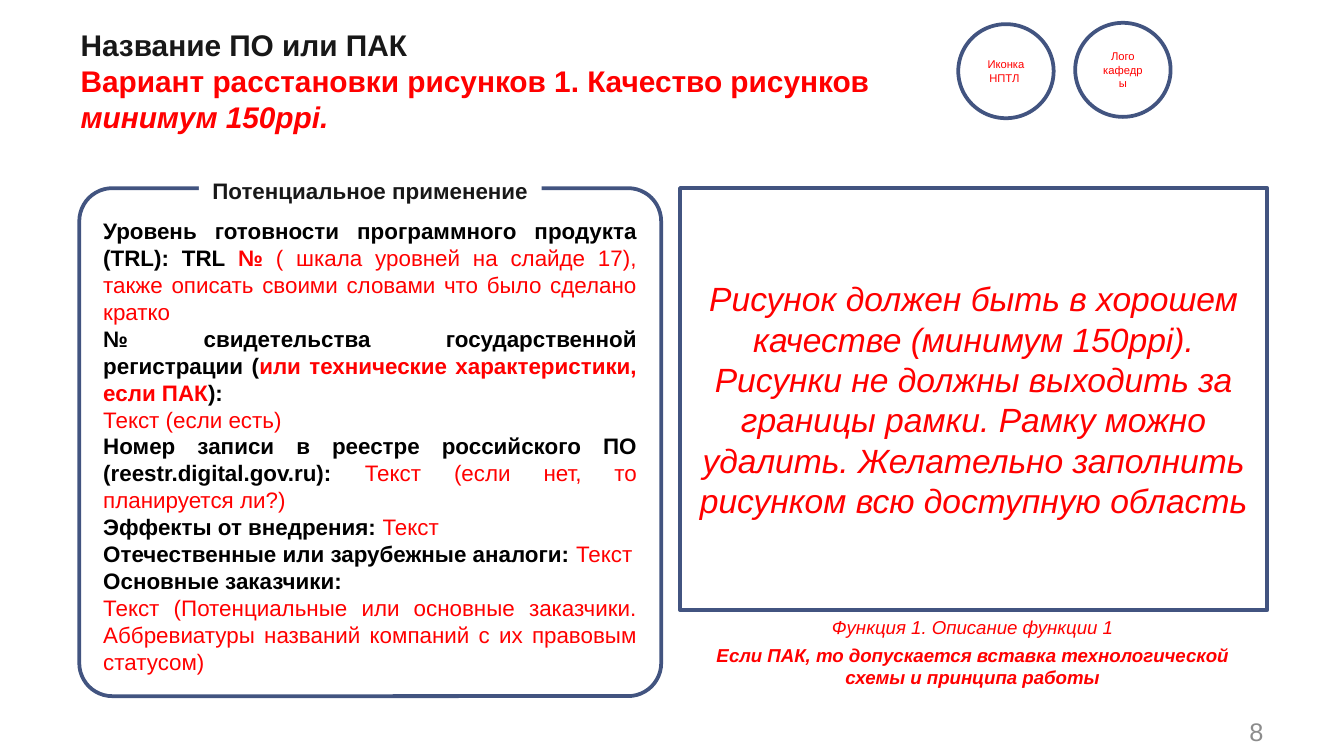
from pptx import Presentation
from pptx import util as u
from pptx.dml.color import RGBColor
from pptx.enum import shapes, text

COLOURS = {"ink": "181818", "black": "000000", "red": "FF0000",
           "frame": "425480", "white": "FFFFFF", "grey": "8C8C8C"}

# Styles of runs
HEADING = {"color": "ink", "bold": True}
LABEL = {"color": "black", "bold": True}
HINT = {"color": "red"}
STRONG = {"color": "red", "bold": True}
SLANTED = {"color": "red", "italic": True}
STRONG_SLANTED = {"color": "red", "bold": True, "italic": True}
NUMBER = {"color": "grey"}

# Content: each text is a list of paragraphs, each paragraph a list of runs
TITLE = [[
    ("Название ПО или ПАК", HEADING), "break",
    ("Вариант расстановки рисунков 1. Качество рисунков ", STRONG),
    ("минимум 150ppi.", STRONG_SLANTED)]]
APPLICATION_HEADING = [[("Потенциальное применение", HEADING)]]
APPLICATION = [
    [("Уровень готовности программного продукта (TRL): TRL ", LABEL),
     ("№ ", STRONG),
     ("( шкала уровней на слайде 17), также описать своими словами "
      "что было сделано кратко", HINT)],
    [("№ свидетельства государственной регистрации (", LABEL),
     ("или технические характеристики, если ПАК", STRONG),
     ("):", LABEL)],
    [("Текст (если есть)", HINT)],
    [("Номер записи в реестре российского ПО (reestr.digital.gov.ru): ", LABEL),
     ("Текст (если нет, то планируется ли?)", HINT)],
    [("Эффекты от внедрения: ", LABEL), ("Текст", HINT)],
    [("Отечественные или зарубежные аналоги: ", LABEL), ("Текст", HINT)],
    [("Основные заказчики:", LABEL)],
    [("Текст (Потенциальные или основные заказчики. Аббревиатуры названий "
      "компаний с их правовым статусом)", HINT)],
]
FIGURE = [[(
    "Рисунок должен быть в хорошем качестве (минимум 150ppi). Рисунки не "
    "должны выходить за границы рамки. Рамку можно удалить. Желательно "
    "заполнить рисунком всю доступную область", SLANTED)]]
CAPTION = [
    [("Функция 1. Описание функции 1", SLANTED)],
    [("Если ПАК, то допускается вставка технологической схемы и принципа "
      "работы", STRONG_SLANTED)],
]
BADGES = [
    (8.00, 0.17, [[("Лого", HINT)], [("кафедры", HINT)]]),
    (7.13, 0.18, [[("Иконка НПТЛ ", HINT)]]),
]
SLIDE_NUMBER = [[("8", NUMBER)]]

# Panel grid, in inches
PANEL_TOP = 1.4
LEFT_X, LEFT_WIDTH, LEFT_HEIGHT = 0.59, 4.33, 3.78
RIGHT_X, RIGHT_WIDTH, RIGHT_HEIGHT = 5.06, 4.37, 3.14
TEXT_MARGIN = 0.08
HEADING_TOP, HEADING_WIDTH, HEADING_HEIGHT = 1.27, 2.55, 0.3
BADGE_SIZE = (0.71, 0.7)


def colour(name):
    return RGBColor.from_string(COLOURS[name])


def write(shape, paragraphs, size, align="LEFT", anchor="TOP", wrap=True, gap=0):
    """Fill a shape with formatted paragraphs; gap is the space between them."""
    frame = shape.text_frame
    frame.word_wrap = wrap
    frame.auto_size = text.MSO_AUTO_SIZE.NONE
    frame.vertical_anchor = text.MSO_ANCHOR[anchor]
    for index, runs in enumerate(paragraphs):
        paragraph = frame.add_paragraph() if index else frame.paragraphs[0]
        paragraph.alignment = text.PP_ALIGN[align]
        if index:
            paragraph.space_before = u.Pt(gap)
        for part in runs:
            if part == "break":
                paragraph.add_line_break()
                continue
            words, style = part
            run = paragraph.add_run()
            run.text = words
            run.font.color.rgb = colour(style["color"])
            values = {"name": "Arial", "size": u.Pt(size),
                      "bold": style.get("bold", False),
                      "italic": style.get("italic", False)}
            for key, value in values.items():
                setattr(run.font, key, value)


def add_box(slide, kind, place, outlined=True):
    shape = slide.shapes.add_shape(shapes.MSO_SHAPE[kind], *map(u.Inches, place))
    shape.shadow.inherit = False
    shape.fill.solid()
    shape.fill.fore_color.rgb = colour("white")
    if outlined:
        shape.line.color.rgb = colour("frame")
        shape.line.width = u.Pt(2)
    else:
        shape.line.fill.background()
    return shape


def add_text(slide, place, paragraphs, size, **options):
    write(slide.shapes.add_textbox(*map(u.Inches, place)), paragraphs, size, **options)


def main():
    presentation = Presentation()
    presentation.slide_width = u.Inches(10)
    presentation.slide_height = presentation.slide_width * 9 // 16
    slide = presentation.slides.add_slide(presentation.slide_layouts[5])

    # Title
    title = slide.shapes.title
    title.left, title.top, title.width, title.height = map(
        u.Inches, (0.5, 0.15, 6.47, 0.7))
    write(title, TITLE, 16)

    # Left panel: frame, heading set into its top edge, description
    panel = add_box(slide, "ROUNDED_RECTANGLE",
                    (LEFT_X, PANEL_TOP, LEFT_WIDTH, LEFT_HEIGHT))
    panel.adjustments[0] = 0.065
    heading_x = LEFT_X + (LEFT_WIDTH - HEADING_WIDTH) / 2
    heading = add_box(slide, "RECTANGLE",
                      (heading_x, HEADING_TOP, HEADING_WIDTH, HEADING_HEIGHT),
                      outlined=False)
    write(heading, APPLICATION_HEADING, 12, align="CENTER", wrap=False)
    add_text(slide, (LEFT_X + TEXT_MARGIN, HEADING_TOP + HEADING_HEIGHT,
                     LEFT_WIDTH - 2 * TEXT_MARGIN, 3.33),
             APPLICATION, 12, align="JUSTIFY")

    # Right panel: caption, and the figure frame above it
    add_text(slide, (RIGHT_X, 4.53, 4.35, 0.82),
             CAPTION, 10, align="CENTER", gap=3)
    figure = add_box(slide, "RECTANGLE",
                     (RIGHT_X, PANEL_TOP, RIGHT_WIDTH, RIGHT_HEIGHT))
    write(figure, FIGURE, 18, align="CENTER", anchor="MIDDLE")

    # Round badges
    for x, y, label in BADGES:
        badge = add_box(slide, "OVAL", (x, y, *BADGE_SIZE))
        write(badge, label, 6, align="CENTER", anchor="MIDDLE")

    # Slide number
    add_text(slide, (8.94, 5.29, 0.56, 0.3), SLIDE_NUMBER, 13.6,
             align="RIGHT", anchor="MIDDLE")

    presentation.save("out.pptx")


if __name__ == "__main__":
    main()
